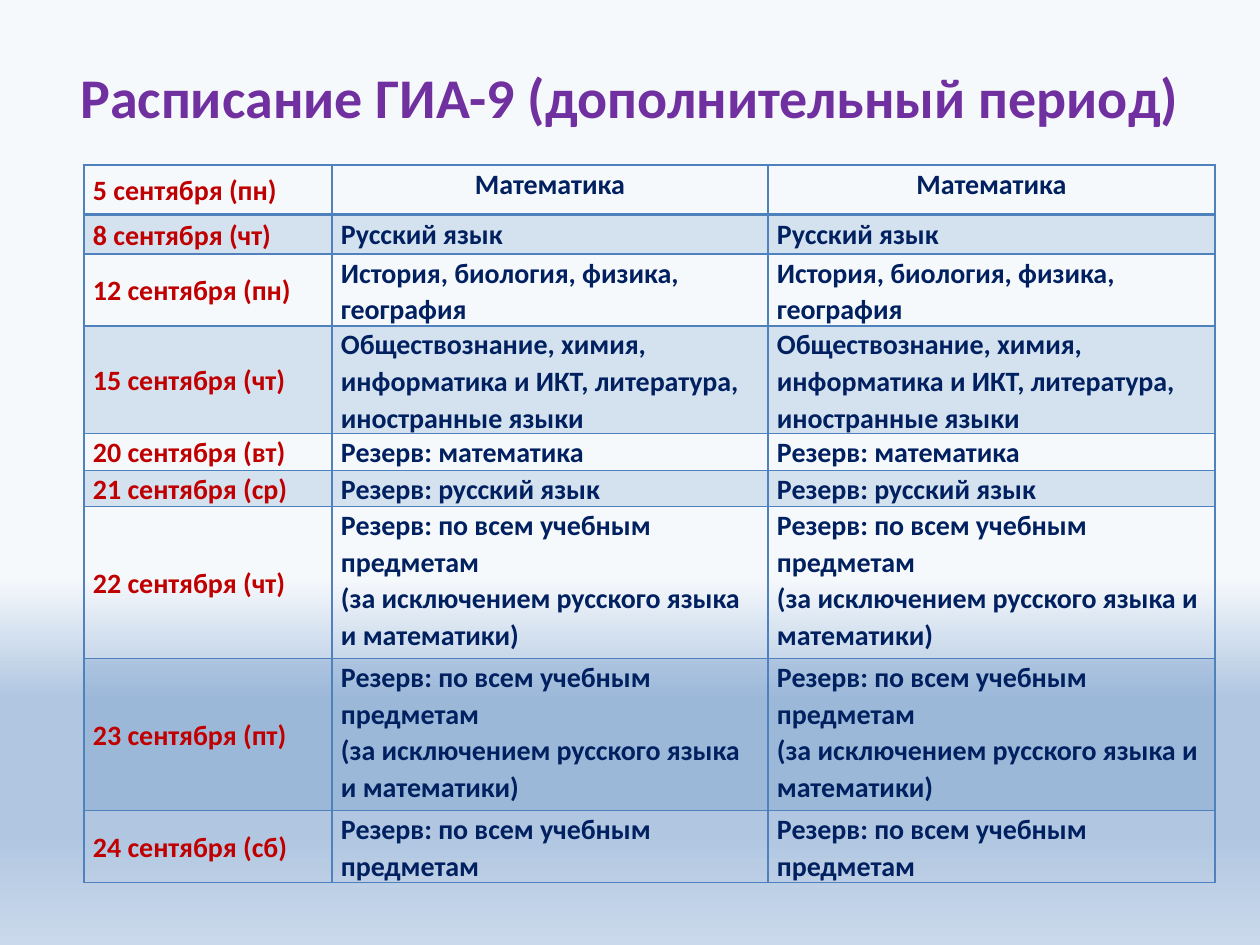
from dataclasses import dataclass

from pptx import Presentation
from pptx.dml.color import RGBColor
from pptx.enum.text import MSO_ANCHOR as ANCHOR, PP_ALIGN as ALIGN
from pptx.oxml.ns import qn
from pptx.util import Pt
from lxml.etree import SubElement

EMU_PER_PX = 914400 / 126


def px(n):
    return round(n * EMU_PER_PX)


@dataclass(frozen=True)
class Theme:
    font: str = "Calibri"
    title_size: int = 32
    body_size: int = 16
    title: str = "7030A0"
    date: str = "C00000"
    subject: str = "002060"
    accent: str = "4F81BD"
    band_opacity: int = 20
    line_spacing: float = 1.07
    backdrop: tuple = ((61, "F6F9FC"), (74, "B0C6E1"),
                       (88, "B0C6E1"), (100, "CAD9EB"))


class SlideBuilder:
    def __init__(self, slide, theme):
        self.s, self.theme = slide, theme

    def background(self):
        fill = self.s.background.fill
        fill.gradient()
        fill.gradient_angle = 270
        stops = self.s.element.find(".//" + qn("a:gsLst"))
        for stop in list(stops):
            stops.remove(stop)
        for percent, color in self.theme.backdrop:
            gs = SubElement(stops, qn("a:gs"), pos=str(percent * 1000))
            SubElement(gs, qn("a:srgbClr"), val=color)

    def add_text(self, p, text, size, color, align):
        p.alignment = align
        r = p.add_run()
        r.text = text
        font = r.font
        font.name, font.size, font.bold = self.theme.font, Pt(size), True
        font.color.rgb = RGBColor.from_string(color)

    def title(self, text, x, y, w, h):
        tf = self.s.shapes.add_textbox(px(x), px(y), px(w), px(h)).text_frame
        tf.word_wrap = True
        tf.vertical_anchor = ANCHOR.MIDDLE
        self.add_text(tf.paragraphs[0], text, self.theme.title_size,
                      self.theme.title, ALIGN.CENTER)

    def borders(self, cell, top=1, bottom=1):
        tc_pr = cell._tc.get_or_add_tcPr()
        for side, width in (("L", 1), ("R", 1), ("T", top), ("B", bottom)):
            ln = SubElement(tc_pr, qn("a:ln" + side), w=str(Pt(width)))
            fill = SubElement(ln, qn("a:solidFill"))
            SubElement(fill, qn("a:srgbClr"), val=self.theme.accent)

    def cell_fill(self, cell, banded):
        if not banded:
            cell.fill.background()
            return
        cell.fill.solid()
        cell.fill.fore_color.rgb = RGBColor.from_string(self.theme.accent)
        color = cell._tc.tcPr.find(qn("a:solidFill")).find(qn("a:srgbClr"))
        SubElement(color, qn("a:alpha"), val=str(self.theme.band_opacity * 1000))

    def cell_text(self, cell, lines, color, align):
        cell.margin_left = cell.margin_right = px(9)
        cell.margin_top = cell.margin_bottom = 0
        tf = cell.text_frame
        for i, line in enumerate(lines):
            p = tf.add_paragraph() if i else tf.paragraphs[0]
            p.line_spacing = self.theme.line_spacing
            self.add_text(p, line, self.theme.body_size, color, align)

    def schedule(self, days, x, y, col_widths, row_heights):
        """Fill a date column and two subject columns with the same text."""
        table = self.s.shapes.add_table(
            len(days), len(col_widths), px(x), px(y),
            px(sum(col_widths)), px(sum(row_heights))).table
        table.first_row = table.horz_banding = False
        for column, width in zip(table.columns, col_widths):
            column.width = px(width)
        for row, height in zip(table.rows, row_heights):
            row.height = px(height)
        for i, (date, subjects) in enumerate(days):
            for j, cell in enumerate(table.rows[i].cells):
                is_date = j == 0
                centred = i == 0 and not is_date
                self.borders(cell, top=2 if i == 1 else 1,
                             bottom=2 if i == 0 else 1)
                self.cell_fill(cell, banded=i % 2 == 1)
                cell.vertical_anchor = ANCHOR.MIDDLE if is_date else ANCHOR.TOP
                self.cell_text(cell, [date] if is_date else subjects,
                               self.theme.date if is_date else self.theme.subject,
                               ALIGN.CENTER if centred else ALIGN.LEFT)


RESERVE = "Резерв: по всем учебным предметам"
EXCEPT = "(за исключением русского языка и математики)"
DAYS = [
    ("5 сентября (пн)", ["Математика"]),
    ("8 сентября (чт)", ["Русский язык"]),
    ("12 сентября (пн)", ["История, биология, физика, география"]),
    ("15 сентября (чт)", ["Обществознание, химия, информатика и ИКТ, "
                          "литература, иностранные языки"]),
    ("20 сентября (вт)", ["Резерв: математика"]),
    ("21 сентября (ср)", ["Резерв: русский язык"]),
    ("22 сентября (чт)", [RESERVE, EXCEPT]),
    ("23 сентября (пт)", [RESERVE, EXCEPT]),
    ("24 сентября (сб)", [RESERVE]),
]


def main():
    prs = Presentation()
    prs.slide_width, prs.slide_height = px(1260), px(945)
    slide = SlideBuilder(prs.slides.add_slide(prs.slide_layouts[6]), Theme())
    slide.background()
    slide.title("Расписание ГИА-9 (дополнительный период)", 63, 38, 1134, 117)
    slide.schedule(DAYS, 84, 165, [248, 436, 447],
                   [50, 39, 53, 102, 37, 34, 152, 152, 53])
    prs.save("out.pptx")


if __name__ == "__main__":
    main()
